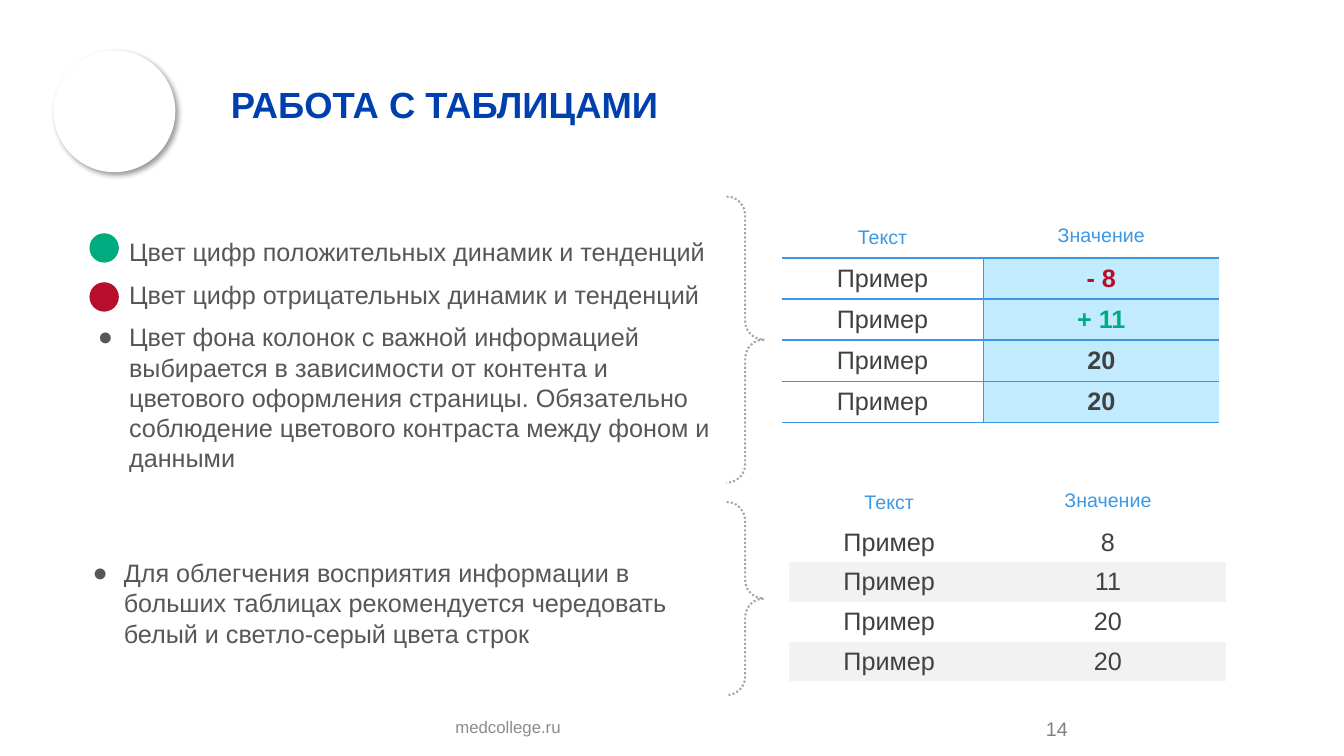
from lxml.etree import SubElement
from pptx import Presentation
from pptx.dml.color import RGBColor
from pptx.enum.dml import MSO_LINE
from pptx.enum.shapes import MSO_SHAPE
from pptx.enum.text import MSO_ANCHOR, MSO_AUTO_SIZE, PP_ALIGN
from pptx.oxml.ns import qn
from pptx.util import Pt

COLORS = {
    "white": "FFFFFF", "title": "0040AE", "text": "575757", "cell": "414141",
    "header": "3D98E3", "accent": "C2EBFF", "stripe": "F2F2F2",
    "green": "00AB80", "red": "B60E2B", "brace": "A6A6A6",
    "number": "808080", "footer": "8C8C8C", "shadow": "000000",
}
PLAIN_TABLE = "{2D5ABB26-0587-4C30-8999-92F81FD0307C}"


def rgb(name):
    return RGBColor.from_string(COLORS[name])


def add_text(para, text, color, size, bold=False):
    span = para.add_run()
    span.text = text
    formats = {"name": "Arial", "size": Pt(size), "bold": bold}
    for key, value in formats.items():
        setattr(span.font, key, value)
    span.font.color.rgb = rgb(color)


def place(shape, box):
    for key, value in zip(("left", "top", "width", "height"), box):
        setattr(shape, key, Pt(value))


def add_disc(page, box, color):
    disc = page.shapes.add_shape(MSO_SHAPE.OVAL, *map(Pt, box))
    disc.shadow.inherit = False
    disc.fill.solid()
    disc.fill.fore_color.rgb = rgb(color)
    disc.line.fill.background()
    return disc


def add_header(page, box):
    """Title with a raised white disc on its left."""
    left, top, width, height = box
    disc = add_disc(page, (left, top + 3, height, height), "white")
    effects = disc._element.spPr.find(qn("a:effectLst"))
    shadow = SubElement(effects, qn("a:outerShdw"), blurRad=str(Pt(4)),
                        dist=str(Pt(3)), dir="2700000", algn="tl", rotWithShape="0")
    tone = SubElement(shadow, qn("a:srgbClr"), val=COLORS["shadow"])
    SubElement(tone, qn("a:alpha"), val="40000")

    title = page.shapes.title
    place(title, (left + 119.5, top, width - 119.5, height))
    frame = title.text_frame
    formats = {
        "margin_left": Pt(7.2), "margin_right": Pt(7.2),
        "margin_top": Pt(3), "margin_bottom": Pt(3), "word_wrap": True,
        "vertical_anchor": MSO_ANCHOR.MIDDLE, "auto_size": MSO_AUTO_SIZE.NONE,
    }
    for key, value in formats.items():
        setattr(frame, key, value)
    para = frame.paragraphs[0]
    para.alignment = PP_ALIGN.LEFT
    para.line_spacing = 0.9
    add_text(para, "РАБОТА С ТАБЛИЦАМИ", "title", 26, True)


def set_bullet(para, shown):
    props = para._p.get_or_add_pPr()
    props.set("marL", str(Pt(32.4)))
    props.set("indent", str(Pt(-22.3) if shown else 0))
    if shown:
        tone = SubElement(props, qn("a:buClr"))
        SubElement(tone, qn("a:srgbClr"), val=COLORS["text"])
        SubElement(props, qn("a:buFont"), typeface="Arial")
        SubElement(props, qn("a:buChar"), char="●")
    else:
        SubElement(props, qn("a:buNone"))


def add_list(page, index, box, items):
    """Each item is its text and the colour of its disc, or None for a bullet."""
    body = page.placeholders[index]
    place(body, box)
    frame = body.text_frame
    frame.auto_size = MSO_AUTO_SIZE.NONE
    frame.vertical_anchor = MSO_ANCHOR.TOP
    frame.word_wrap = True
    for number, (text, disc_color) in enumerate(items):
        para = frame.add_paragraph() if number else frame.paragraphs[0]
        set_bullet(para, disc_color is None)
        para.alignment = PP_ALIGN.LEFT
        para.line_spacing = 1.0
        para.space_before = Pt(0)
        para.space_after = Pt(9 if disc_color else 0)
        add_text(para, text, "text", 18)
        if disc_color:
            add_disc(page, (box[0] + 11.3, box[1] + 1.6 + 35 * number, 21, 21), disc_color)


def add_border(cell, side, width):
    line = SubElement(cell._tc.get_or_add_tcPr(), qn("a:" + side), w=str(Pt(width)))
    fill = SubElement(line, qn("a:solidFill"))
    SubElement(fill, qn("a:srgbClr"), val=COLORS["header"])


def add_values(page, box, values, ruled):
    """Two-column table, either ruled with an accent column or striped."""
    rows = [("Текст", "Значение")] + [("Пример", value) for value in values]
    frame = page.shapes.add_table(len(rows), 2, *map(Pt, box))
    table = frame.table
    table._tbl.tblPr.find(qn("a:tableStyleId")).text = PLAIN_TABLE
    table.horz_banding = False
    for column, share in zip(table.columns, (0.46, 0.54)):
        column.width = Pt(box[2] * share)
    signs = {"-": "red", "+": "green"}
    for r, row in enumerate(rows):
        table.rows[r].height = Pt(box[3] / len(rows))
        for c, text in enumerate(row):
            cell = table.cell(r, c)
            for side in ("left", "right", "top", "bottom"):
                setattr(cell, "margin_" + side, Pt(3))
            cell.vertical_anchor = MSO_ANCHOR.MIDDLE
            key_value = ruled and r > 0 and c == 1
            if ruled:
                if key_value:
                    add_border(cell, "lnL", 1)
                if r > 0:
                    add_border(cell, "lnT", 1.5 if r == 1 else 1)
                add_border(cell, "lnB", 1 if r else 1.5)
            striped = not ruled and r > 0 and r % 2 == 0
            cell.fill.solid()
            cell.fill.fore_color.rgb = rgb(
                "accent" if key_value else "stripe" if striped else "white")
            para = cell.text_frame.paragraphs[0]
            para.alignment = PP_ALIGN.CENTER
            if r == 0:
                para.line_spacing = 0.8 if c else 1.0
                add_text(para, text, "header", 14)
            else:
                add_text(para, text, signs.get(text[0], "cell"), 18, key_value)


def add_brace(page, box):
    brace = page.shapes.add_shape(MSO_SHAPE.RIGHT_BRACE, *map(Pt, box))
    brace.shadow.inherit = False
    brace.adjustments[0] = 0.497
    brace.fill.background()
    brace.line.color.rgb = rgb("brace")
    brace.line.width = Pt(1.5)
    brace.line.dash_style = MSO_LINE.ROUND_DOT


def add_note(page, box, text, color, size, anchor):
    note = page.shapes.add_textbox(*map(Pt, box))
    note.text_frame.word_wrap = True
    note.text_frame.vertical_anchor = anchor
    add_text(note.text_frame.paragraphs[0], text, color, size)


def add_footer(page, box):
    left, top, width, height = box
    add_note(page, (left, top + 2.5, 324, height), "medcollege.ru", "footer", 12, MSO_ANCHOR.TOP)
    add_note(page, (left + width - 135.4, top, 135.4, height), "14", "number", 14,
             MSO_ANCHOR.MIDDLE)


def main():
    deck = Presentation()
    deck.slide_width, deck.slide_height = Pt(960), Pt(540)
    page = deck.slides.add_slide(deck.slide_layouts[3])

    add_header(page, (38.2, 33, 869, 87))
    # Colour rules with the ruled table
    add_list(page, 1, (52.6, 165, 476, 156), [
        ("Цвет цифр положительных динамик и тенденций", "green"),
        ("Цвет цифр отрицательных динамик и тенденций", "red"),
        ("Цвет фона колонок с важной информацией выбирается в зависимости от "
         "контента и цветового оформления страницы. Обязательно соблюдение "
         "цветового контраста между фоном и данными", None),
    ])
    add_brace(page, (519, 140.4, 26.6, 204.5))
    add_values(page, (558.5, 154.8, 312.5, 146.9), ["- 8", "+ 11", "20", "20"], True)
    # Row striping with the striped table
    add_list(page, 2, (48.8, 394.6, 479.5, 73), [
        ("Для облегчения восприятия информации в больших таблицах рекомендуется "
         "чередовать белый и светло-серый цвета строк", None),
    ])
    add_brace(page, (519, 358.6, 26.6, 138))
    add_values(page, (563.3, 344.9, 312.5, 141.8), ["8", "11", "20", "20"], False)
    add_footer(page, (318.2, 505.6, 557.2, 29.5))

    deck.save("out.pptx")


if __name__ == "__main__":
    main()
